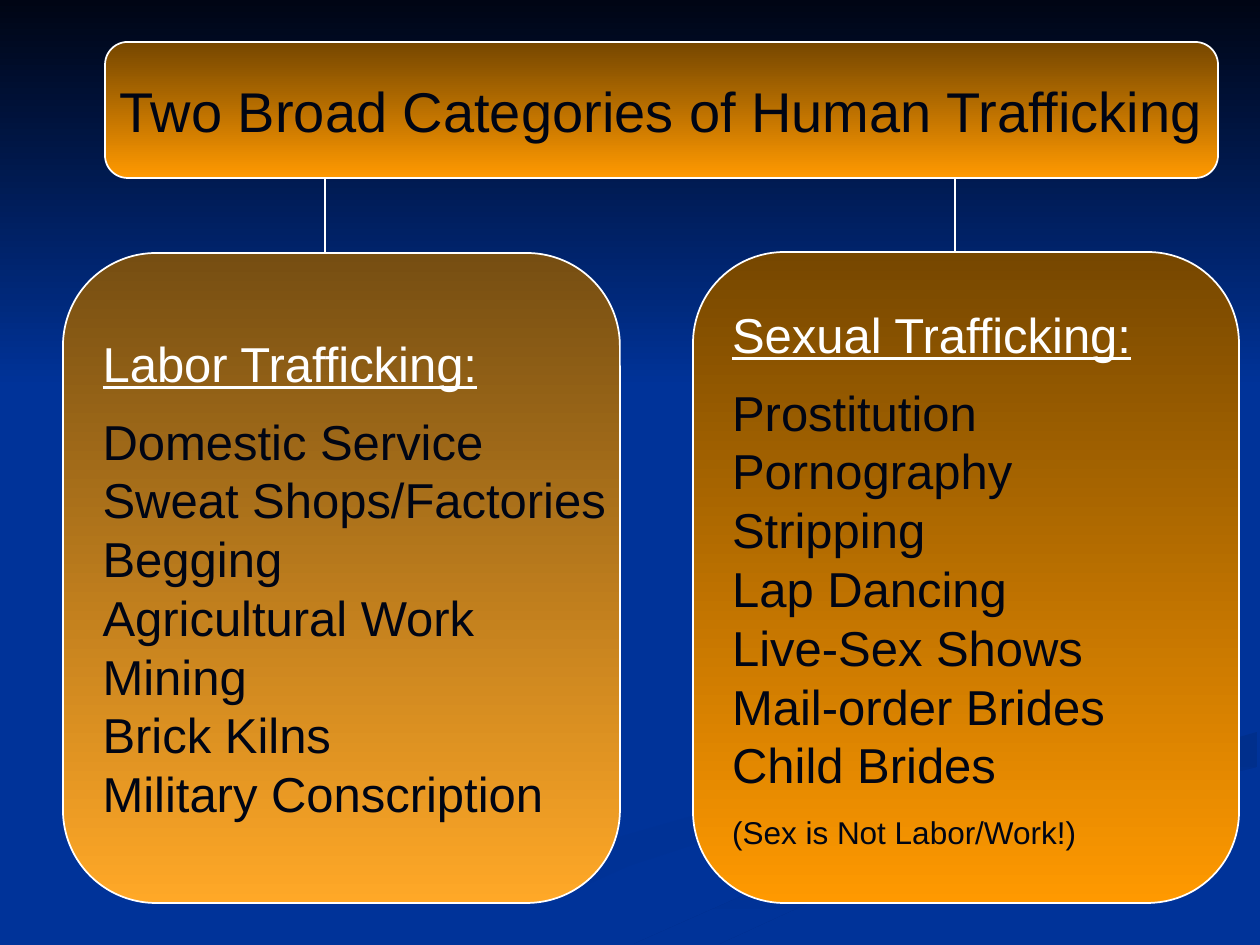
from dataclasses import dataclass

from lxml import etree
from pptx import Presentation
from pptx.dml.color import RGBColor
from pptx.enum.shapes import MSO_CONNECTOR, MSO_SHAPE
from pptx.enum.text import MSO_ANCHOR, MSO_AUTO_SIZE, PP_ALIGN
from pptx.oxml.ns import qn
from pptx.util import Pt

RECT, ROUND = MSO_SHAPE.RECTANGLE, MSO_SHAPE.ROUNDED_RECTANGLE
STRAIGHT = MSO_CONNECTOR.STRAIGHT
MIDDLE, NO_FIT = MSO_ANCHOR.MIDDLE, MSO_AUTO_SIZE.NONE
LEFT, CENTER = PP_ALIGN.LEFT, PP_ALIGN.CENTER
EMU_PER_PX = 914400 / 126
WIDTH, HEIGHT = 1260, 945


@dataclass(frozen=True)
class Theme:
    font: str = "Arial"
    blue: str = "003399"
    dark: str = "000514"
    white: str = "FFFFFF"
    amber: tuple[str, str] = ("764700", "FF9900")
    pale_amber: tuple[str, str] = ("764E12", "FFA827")
    title: int = 32
    body: int = 28
    note: int = 18
    gap: float = 10.8
    leading: float = 1.2
    line: int = 1
    corner: float = 0.167


@dataclass(frozen=True)
class Box:
    x: int
    y: int
    w: int
    h: int


@dataclass(frozen=True)
class Panel:
    box: Box
    colors: tuple[str, str]
    heading: str
    items: tuple[str, ...]
    note: str = ""


@dataclass(frozen=True)
class Swirl:
    colors: tuple[str, str]
    angle: int
    points: tuple[tuple[int, int], ...]


THEME = Theme()
TITLE = "Two Broad Categories of Human Trafficking"
TITLE_BOX = Box(105, 42, 1113, 136)
LINK_XS = (325, 955)

PANELS = (
    Panel(Box(63, 253, 557, 650), THEME.pale_amber, "Labor Trafficking:",
          ("Domestic Service", "Sweat Shops/Factories", "Begging", "Agricultural Work",
           "Mining", "Brick Kilns", "Military Conscription")),
    Panel(Box(693, 252, 546, 651), THEME.amber, "Sexual Trafficking:",
          ("Prostitution", "Pornography", "Stripping", "Lap Dancing",
           "Live-Sex Shows", "Mail-order Brides", "Child Brides"),
          "(Sex is Not Labor/Work!)"),
)

SWIRLS = (
    Swirl((THEME.blue, "003193"), 0, (
        (966, 740), (776, 792), (577, 849), (378, 944),
        (455, 944), (629, 866), (785, 815), (990, 758))),
    Swirl(("002F8C", THEME.blue), 90, (
        (634, 944), (719, 944), (876, 872), (1034, 820),
        (1257, 767), (1257, 732), (1004, 804), (794, 873))),
)


def px(n: int) -> int:
    return round(n * EMU_PER_PX)


def rgb(color: str) -> RGBColor:
    return RGBColor.from_string(color)


def paint(sp, colors: tuple[str, str], angle: int = 90) -> None:
    """Fill with a gradient whose angle runs clockwise."""
    sp.shadow.inherit = False
    sp.fill.gradient()
    sp.fill.gradient_angle = -angle % 360
    for stop, position, color in zip(sp.fill.gradient_stops, (0, 1), colors):
        stop.position = position
        stop.color.rgb = rgb(color)


def add_swirl(slide, swirl: Swirl) -> None:
    builder = slide.shapes.build_freeform(*swirl.points[0], scale=EMU_PER_PX)
    builder.add_line_segments(swirl.points[1:], close=True)
    sp = builder.convert_to_shape()
    paint(sp, swirl.colors, swirl.angle)
    sp.line.fill.background()


def add_box(slide, kind, box: Box, colors: tuple[str, str]):
    sp = slide.shapes.add_shape(kind, px(box.x), px(box.y), px(box.w), px(box.h))
    paint(sp, colors)
    if kind == ROUND:
        sp.adjustments[0] = THEME.corner
        sp.line.color.rgb = rgb(THEME.white)
        sp.line.width = Pt(THEME.line)
    else:
        sp.line.fill.background()
    return sp


def style(p, size: int, color: str, align=LEFT) -> None:
    p.alignment = align
    p.font.name, p.font.size = THEME.font, Pt(size)
    p.font.color.rgb = rgb(color)


def add_panel(slide, panel: Panel) -> None:
    tf = add_box(slide, ROUND, panel.box, panel.colors).text_frame
    tf.word_wrap, tf.vertical_anchor = False, MIDDLE
    notes = (panel.note,) if panel.note else ()
    tf.text = "\n".join((panel.heading, *panel.items, *notes))
    for i, p in enumerate(tf.paragraphs):
        size = THEME.note if i > len(panel.items) else THEME.body
        style(p, size, THEME.dark if i else THEME.white)
        p.font.underline = i == 0
        p.line_spacing = Pt(size * THEME.leading)
        if i in (1, len(panel.items) + 1):
            p.space_before = Pt(THEME.gap)


def add_title(slide) -> None:
    add_box(slide, ROUND, TITLE_BOX, THEME.amber)
    sp, box = slide.shapes.title, TITLE_BOX
    slide.shapes._spTree.append(sp._element)  # bring the title above its box
    sp.left, sp.top, sp.width, sp.height = px(box.x), px(box.y), px(box.w), px(box.h)
    tf = sp.text_frame
    tf.text = TITLE
    tf.word_wrap, tf.auto_size, tf.vertical_anchor = False, NO_FIT, MIDDLE
    style(tf.paragraphs[0], THEME.title, THEME.dark, CENTER)


def add_link(slide, x: int) -> None:
    top, bottom = TITLE_BOX.y + TITLE_BOX.h, PANELS[-1].box.y
    line = slide.shapes.add_connector(STRAIGHT, px(x), px(top), px(x), px(bottom))
    line.line.color.rgb = rgb(THEME.white)
    line.line.width = Pt(THEME.line)
    etree.SubElement(line._element.spPr, qn("a:effectLst"))


def main() -> None:
    prs = Presentation()
    prs.slide_width, prs.slide_height = px(WIDTH), px(HEIGHT)
    slide = prs.slides.add_slide(prs.slide_layouts[5])

    # Background
    slide.background.fill.solid()
    slide.background.fill.fore_color.rgb = rgb(THEME.blue)
    for swirl in SWIRLS:
        add_swirl(slide, swirl)
    add_box(slide, RECT, Box(0, 0, WIDTH, 388), (THEME.dark, THEME.blue))

    # Title, categories and the lines that join them
    add_title(slide)
    for panel in PANELS:
        add_panel(slide, panel)
    for x in LINK_XS:
        add_link(slide, x)

    prs.save("out.pptx")


if __name__ == "__main__":
    main()
